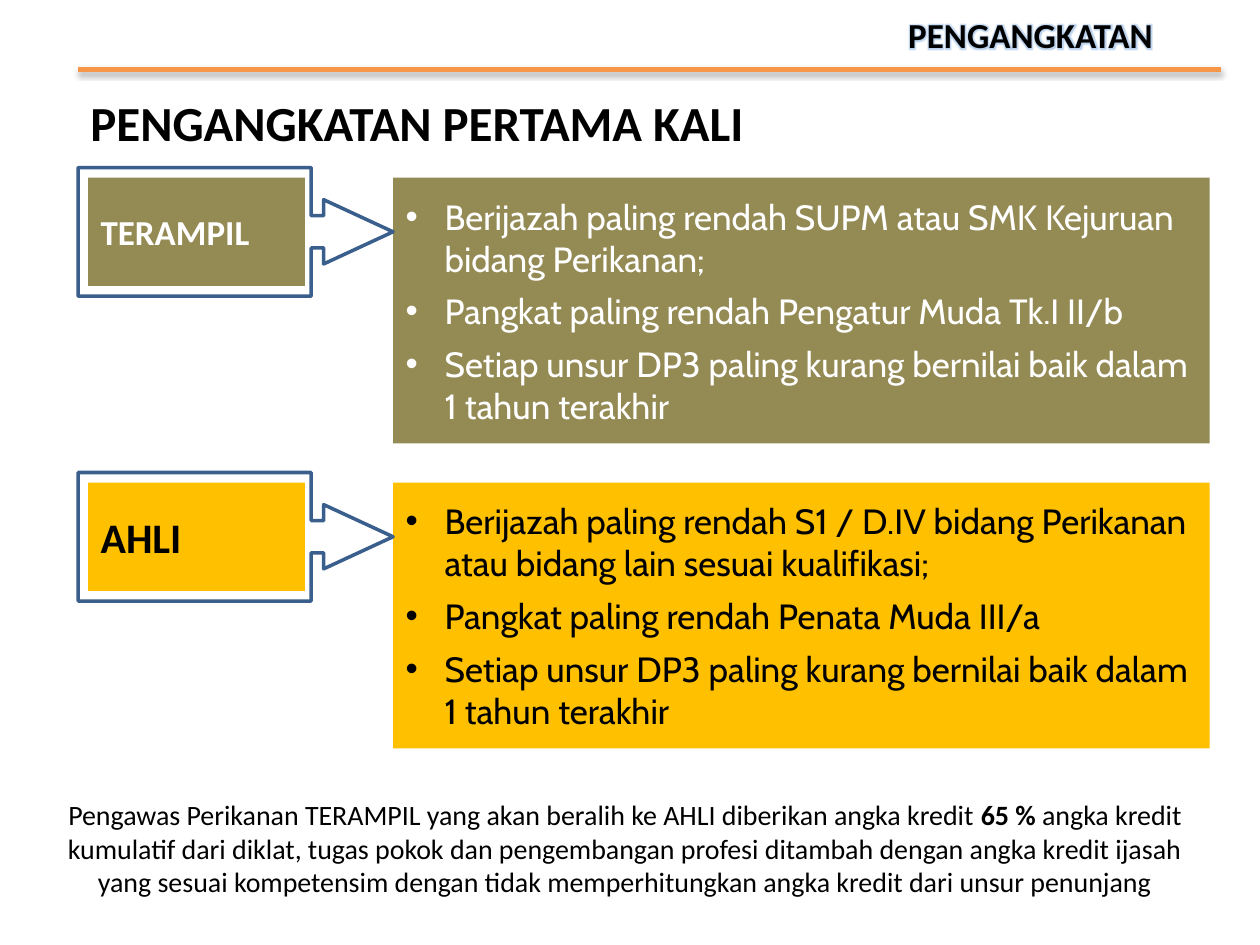
from lxml import etree
from pptx import Presentation, util as u
from pptx.dml.color import RGBColor
from pptx.enum import shapes, text
from pptx.oxml import parse_xml
from pptx.oxml.ns import nsdecls, qn

Inches, Pt = u.Inches, u.Pt
BLACK, WHITE, OLIVE, GOLD = "000000", "FFFFFF", "948A54", "FFC000"
ORANGE, NAVY, GLOW = "F79646", "3A5F8C", "8DB4E3"
INDENT = 0.31

LEVELS = [
    dict(top=1.33, label="TERAMPIL", size=20, fill=OLIVE, color=WHITE, terms=[
        "Berijazah paling rendah SUPM atau SMK Kejuruan bidang Perikanan;",
        "Pangkat paling rendah Pengatur Muda Tk.I II/b",
        "Setiap unsur DP3 paling kurang bernilai baik dalam 1 tahun terakhir"]),
    dict(top=3.75, label="AHLI", size=24, fill=GOLD, color=BLACK, terms=[
        "Berijazah paling rendah S1 / D.IV bidang Perikanan atau bidang lain sesuai kualifikasi;",
        "Pangkat paling rendah Penata Muda III/a",
        "Setiap unsur DP3 paling kurang bernilai baik dalam 1 tahun terakhir"]),
]
NOTE = [
    ("Pengawas Perikanan TERAMPIL yang akan beralih ke AHLI diberikan angka kredit ", False),
    ("65 % ", True),
    ("angka kredit kumulatif dari diklat, tugas pokok dan pengembangan profesi ditambah "
     "dengan angka kredit ijasah yang sesuai kompetensim dengan tidak memperhitungkan "
     "angka kredit dari unsur penunjang", False),
]


def rgb(value):
    return RGBColor.from_string(value)


def add_run(paragraph, words, color=BLACK, **font):
    run = paragraph.add_run()
    run.text = words
    for key, value in font.items():
        setattr(run.font, key, value)
    run.font.color.rgb = rgb(color)
    return run


def write(shape, lines, color=BLACK, bullet=False, **font):
    """Fill a shape with left-aligned, vertically centred lines; return the last run."""
    frame = shape.text_frame
    frame.word_wrap = True
    frame.vertical_anchor = text.MSO_ANCHOR.MIDDLE
    for i, line in enumerate(lines):
        paragraph = frame.add_paragraph() if i else frame.paragraphs[0]
        paragraph.alignment = text.PP_ALIGN.LEFT
        paragraph.space_after = Pt(6)
        if bullet:
            props = paragraph._p.get_or_add_pPr()
            props.set("marL", str(Inches(INDENT)))
            props.set("indent", str(-Inches(INDENT)))
            etree.SubElement(props, qn("a:buFont")).set("typeface", "Arial")
            etree.SubElement(props, qn("a:buChar")).set("char", "•")
        run = add_run(paragraph, line, color, **font)
    return run


def add_box(slide, kind, left, top, width, height, fill=None):
    box = slide.shapes.add_shape(kind, *map(Inches, (left, top, width, height)))
    box.shadow.inherit = False
    if fill:
        box.fill.solid()
        box.fill.fore_color.rgb = rgb(fill)
        box.line.fill.background()
    else:
        box.fill.background()
        box.line.color.rgb = rgb(NAVY)
        box.line.width = Pt(2)
    return box


def add_textbox(slide, left, top, width, height):
    return slide.shapes.add_textbox(*map(Inches, (left, top, width, height)))


def add_header(slide, left, top, width):
    rule = slide.shapes.add_connector(
        shapes.MSO_CONNECTOR.STRAIGHT, Inches(left), Inches(top),
        Inches(left + width), Inches(top))
    rule.line.color.rgb = rgb(ORANGE)
    rule.line.width = Pt(3)
    rule._element.spPr.append(parse_xml(
        f'<a:effectLst {nsdecls("a")}><a:outerShdw blurRad="{Pt(3.1)}" dist="{Pt(1.8)}" '
        f'dir="5400000" rotWithShape="0"><a:srgbClr val="{BLACK}"><a:alpha val="35000"/>'
        '</a:srgbClr></a:outerShdw></a:effectLst>'))

    style = dict(name="Calibri", bold=True)
    section = write(add_textbox(slide, left + 6.49, top - 0.86, 2.81, 1.17),
                    ["PENGANGKATAN"], size=Pt(20), **style)
    section.font._element.find(qn("a:solidFill")).addnext(parse_xml(
        f'<a:effectLst {nsdecls("a")}><a:glow rad="{Pt(4)}"><a:srgbClr val="{GLOW}">'
        '<a:alpha val="60000"/></a:srgbClr></a:glow></a:effectLst>'))
    write(add_textbox(slide, left, top + 0.07, 7.03, 0.7),
          ["PENGANGKATAN PERTAMA KALI"], size=Pt(28), **style)


def add_level(slide, left, top, label, size, fill, color, terms):
    """Label inside an arrow callout that points to its panel of terms."""
    rect = shapes.MSO_SHAPE.RECTANGLE
    write(add_box(slide, rect, left + 0.08, top + 0.08, 1.72, 0.86, fill),
          [label], color, name="Calibri", size=Pt(size), bold=True)
    write(add_box(slide, rect, left + 2.5, top + 0.08, 6.48, 2.11, fill),
          terms, color, bullet=True, name="Cabin", size=Pt(20))
    callout = add_box(slide, shapes.MSO_SHAPE.RIGHT_ARROW_CALLOUT, left, top, 2.5, 1.02)
    for i, value in enumerate((0.25, 0.25, 0.54, 0.74)):
        callout.adjustments[i] = value


def add_note(slide, left, top, width, height):
    frame = add_textbox(slide, left, top, width, height).text_frame
    frame.word_wrap = True
    frame.auto_size = text.MSO_AUTO_SIZE.SHAPE_TO_FIT_TEXT
    paragraph = frame.paragraphs[0]
    paragraph.alignment = text.PP_ALIGN.CENTER
    for words, bold in NOTE:
        add_run(paragraph, words, name="Calibri", size=Pt(16), bold=bold)


def main():
    deck = Presentation()
    deck.slide_width, deck.slide_height = Inches(10), Inches(7.5)
    slide = deck.slides.add_slide(deck.slide_layouts[6])
    add_header(slide, 0.62, 0.55, 9.07)
    for level in LEVELS:
        add_level(slide, 0.62, **level)
    add_note(slide, 0.39, 6.28, 9.14, 0.91)
    deck.save("out.pptx")


if __name__ == "__main__":
    main()
